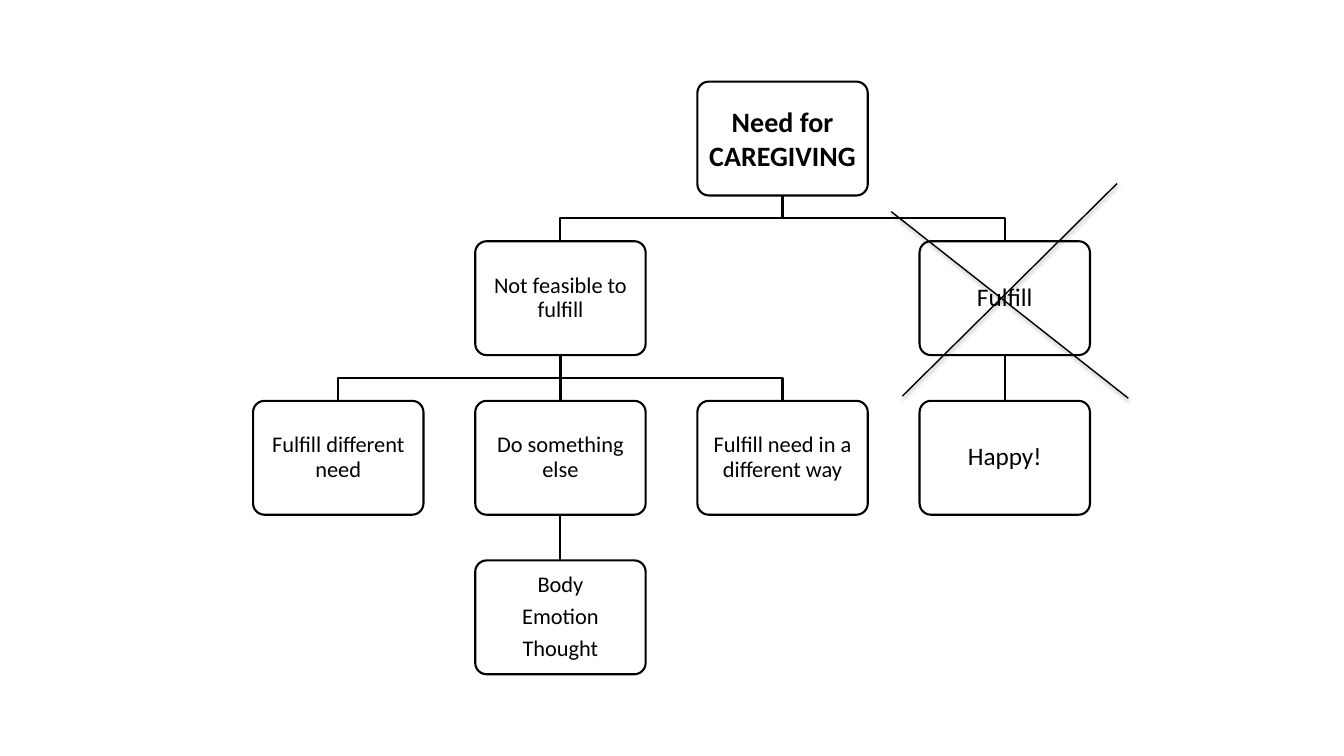
from dataclasses import dataclass

from lxml.etree import SubElement
from pptx import Presentation
from pptx.dml.color import RGBColor
from pptx.enum.shapes import MSO_CONNECTOR as Link, MSO_SHAPE as Preset
from pptx.enum.text import MSO_ANCHOR as Anchor, PP_ALIGN as Align
from pptx.oxml.ns import qn
from pptx.util import Inches, Pt


@dataclass
class Theme:
    font: str = "Calibri"
    ink: RGBColor = RGBColor(0, 0, 0)
    heading: int = 20
    outcome: int = 18
    body: int = 16
    outline: float = 1.5
    heavy: float = 2
    cross: float = 1


@dataclass
class Grid:
    left: float = 2.51
    top: float = 0.81
    column_step: float = 6.61 / 3
    row_step: float = 4.75 / 3
    width: float = 1.69
    height: float = 1.13

    def corner(self, column, row):
        return self.left + column * self.column_step, self.top + row * self.row_step

    def top_centre(self, column, row):
        left, top = self.corner(column, row)
        return left + self.width / 2, top

    def bottom_centre(self, column, row):
        centre, top = self.top_centre(column, row)
        return centre, top + self.height


class TreePage:
    def __init__(self, page, theme, grid):
        self.page, self.theme, self.grid = page, theme, grid

    def stroke(self, shape, weight):
        shape.line.color.rgb = self.theme.ink
        shape.line.width = Pt(weight)

    def box(self, column, row, lines, size, bold=False, spacing=0.9):
        left, top = self.grid.corner(column, row)
        box = self.page.shapes.add_shape(
            Preset.ROUNDED_RECTANGLE, Inches(left), Inches(top),
            Inches(self.grid.width), Inches(self.grid.height))
        box.adjustments[0] = 0.1
        box.shadow.inherit = False
        box.fill.background()
        self.stroke(box, self.theme.outline)
        frame = box.text_frame
        frame.word_wrap = True
        frame.vertical_anchor = Anchor.MIDDLE
        frame.margin_left = frame.margin_right = Inches(0.07)
        frame.margin_top = frame.margin_bottom = Inches(0.07)
        for index, line in enumerate(lines):
            para = frame.add_paragraph() if index else frame.paragraphs[0]
            para.alignment = Align.CENTER
            para.line_spacing = spacing
            para.space_after = Pt(0.35 * size)
            run = para.add_run()
            run.text = line
            run.font.name, run.font.size = self.theme.font, Pt(size)
            run.font.bold = bold
            run.font.color.rgb = self.theme.ink

    def line(self, start, end, weight):
        line = self.page.shapes.add_connector(
            Link.STRAIGHT, *(Inches(value) for value in (*start, *end)))
        self.stroke(line, weight)
        return SubElement(line._element.spPr, qn("a:effectLst"))

    def branch(self, parent, child, weight):
        start, end = self.grid.bottom_centre(*parent), self.grid.top_centre(*child)
        if parent[0] == child[0]:
            self.line(start, end, weight)
            return
        middle = (start[1] + end[1]) / 2
        points = [(Inches(x), Inches(y)) for x, y in
                  (start, (start[0], middle), (end[0], middle), end)]
        builder = self.page.shapes.build_freeform(*points[0])
        builder.add_line_segments(points[1:], close=False)
        elbow = builder.convert_to_shape()
        elbow.shadow.inherit = False
        elbow.fill.background()
        self.stroke(elbow, weight)

    def cross_stroke(self, start, end):
        effects = self.line(start, end, self.theme.cross)
        shadow = SubElement(effects, qn("a:outerShdw"), blurRad=str(Pt(3.1)),
                            dist=str(Pt(1.6)), dir="5400000", rotWithShape="0")
        colour = SubElement(shadow, qn("a:srgbClr"), val=str(self.theme.ink))
        SubElement(colour, qn("a:alpha"), val="38000")


def main():
    deck = Presentation()
    deck.slide_width, deck.slide_height = Inches(13.33), Inches(7.5)
    theme = Theme()
    tree = TreePage(deck.slides.add_slide(deck.slide_layouts[6]), theme, Grid())

    # Places in the tree as column and row
    need, blocked, fulfill = (2, 0), (1, 1), (3, 1)
    different, other, another_way, happy = ((column, 2) for column in range(4))
    responses = (1, 3)

    # Branches
    for parent, child in [(need, blocked), (need, fulfill), (blocked, different),
                          (blocked, another_way), (other, responses),
                          (fulfill, happy)]:
        tree.branch(parent, child, theme.outline)
    tree.branch(blocked, other, theme.heavy)

    # Boxes
    tree.box(*need, ["Need for CAREGIVING"], theme.heading, bold=True, spacing=1.0)
    for place, lines in [(blocked, ["Not feasible to fulfill"]),
                         (different, ["Fulfill different need"]),
                         (other, ["Do something else"]),
                         (another_way, ["Fulfill need in a different way"]),
                         (responses, ["Body", "Emotion", "Thought"])]:
        tree.box(*place, lines, theme.body)
    tree.box(*fulfill, ["Fulfill"], theme.outcome)
    tree.box(*happy, ["Happy!"], theme.outcome)

    # Cross over the fulfilled need
    tree.cross_stroke((8.84, 2.1), (11.19, 3.95))
    tree.cross_stroke((11.08, 1.82), (8.95, 3.93))

    deck.save("out.pptx")


if __name__ == "__main__":
    main()
